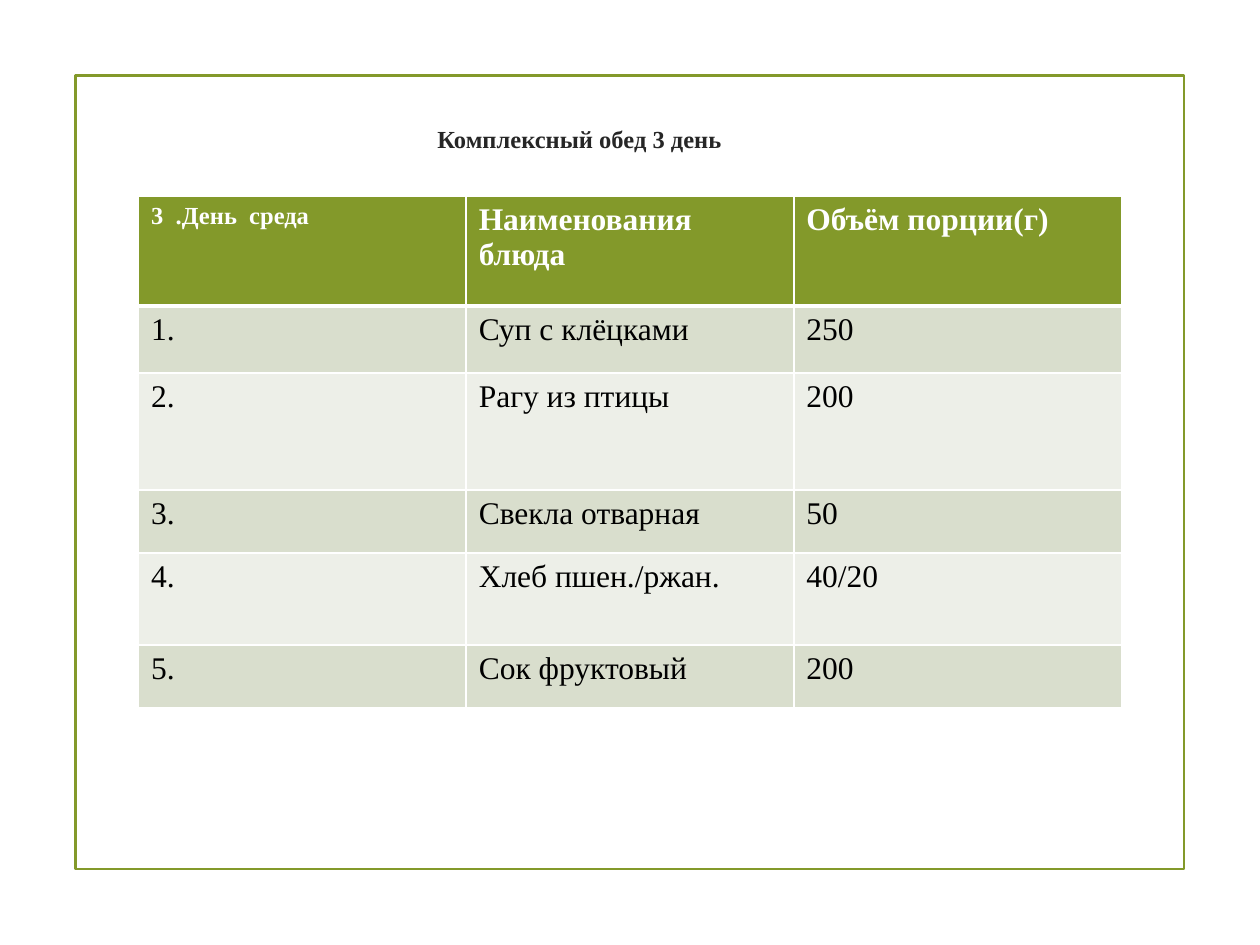
from pptx import Presentation, util as u
from pptx.dml.color import RGBColor
from pptx.enum import shapes, text
from pptx.oxml import parse_xml
from pptx.oxml.ns import nsdecls

W, H = 10, 7.5
FONT = "Times New Roman"
GREEN, WHITE, BLACK, DARK = "83992A", "FFFFFF", "000000", "262626"
BANDS = ("D9DECD", "EDEFE8")
ROW_HEIGHTS = (0.87, 0.53, 0.93, 0.5, 0.73, 0.5)
HEADER = ("3  .День  среда", "Наименования блюда", "Объём порции(г)")
DISHES = (
    ("Суп с клёцками", "250"),
    ("Рагу из птицы", "200"),
    ("Свекла отварная", "50"),
    ("Хлеб пшен./ржан.", "40/20"),
    ("Сок фруктовый", "200"),
)


def color(hex_value):
    return RGBColor.from_string(hex_value)


def inches(box):
    return [u.Inches(v) for v in box]


def write(tf, words, size, hex_value, bold):
    p = tf.paragraphs[0]
    r = p.add_run()
    r.text = words
    formats = {"name": FONT, "size": u.Pt(size), "bold": bold}
    for name, value in formats.items():
        setattr(r.font, name, value)
    r.font.color.rgb = color(hex_value)
    return p


def add_frame(s, box):
    sp = s.shapes.add_shape(shapes.MSO_SHAPE.RECTANGLE, *inches(box))
    sp.shadow.inherit = False
    sp.fill.background()
    sp.line.color.rgb = color(GREEN)
    sp.line.width = u.Pt(1.25)


def add_title(s, box):
    sp = s.shapes.title
    sp.left, sp.top, sp.width, sp.height = inches(box)
    tf = sp.text_frame
    formats = {"word_wrap": True, "auto_size": text.MSO_AUTO_SIZE.NONE,
               "vertical_anchor": text.MSO_ANCHOR.TOP}
    for name, value in formats.items():
        setattr(tf, name, value)
    p = write(tf, "Комплексный обед 3 день", 14, DARK, True)
    p.alignment = text.PP_ALIGN.CENTER


def set_borders(cell, bottom):
    # Borders come before the fill in the cell properties
    tc_pr = cell._tc.get_or_add_tcPr()
    widths = {"L": 1, "R": 1, "T": 1, "B": bottom}
    for i, (side, width) in enumerate(widths.items()):
        tc_pr.insert(i, parse_xml(
            f'<a:ln{side} {nsdecls("a")} w="{u.Pt(width)}"><a:solidFill>'
            f'<a:srgbClr val="{WHITE}"/></a:solidFill></a:ln{side}>'))


def add_menu(s, box):
    rows = [HEADER] + [(f"{n}.", *dish) for n, dish in enumerate(DISHES, 1)]
    table = s.shapes.add_table(len(rows), len(HEADER), *inches(box)).table
    for column in table.columns:
        column.width = u.Inches(box[2] / len(HEADER))
    for i, (row, height) in enumerate(zip(rows, ROW_HEIGHTS)):
        table.rows[i].height = u.Inches(height)
        head = i == 0
        for j, words in enumerate(row):
            cell = table.cell(i, j)
            cell.fill.solid()
            cell.fill.fore_color.rgb = color(GREEN if head else BANDS[(i - 1) % 2])
            set_borders(cell, 3 if head else 1)
            write(cell.text_frame, words, 14 if head and j == 0 else 18,
                  WHITE if head else BLACK, head)


def main():
    prs = Presentation()
    prs.slide_width, prs.slide_height = inches((W, H))
    s = prs.slides.add_slide(prs.slide_layouts[5])
    # Frame, title, then the menu table
    add_frame(s, (0.06 * W, 0.08 * H, 0.88 * W, 0.84 * H))
    add_title(s, (0.13 * W, 0.125 * H, 0.66 * W, 0.05 * H))
    add_menu(s, (0.11 * W, 0.208 * H, 0.78 * W, sum(ROW_HEIGHTS)))
    prs.save("out.pptx")


if __name__ == "__main__":
    main()
